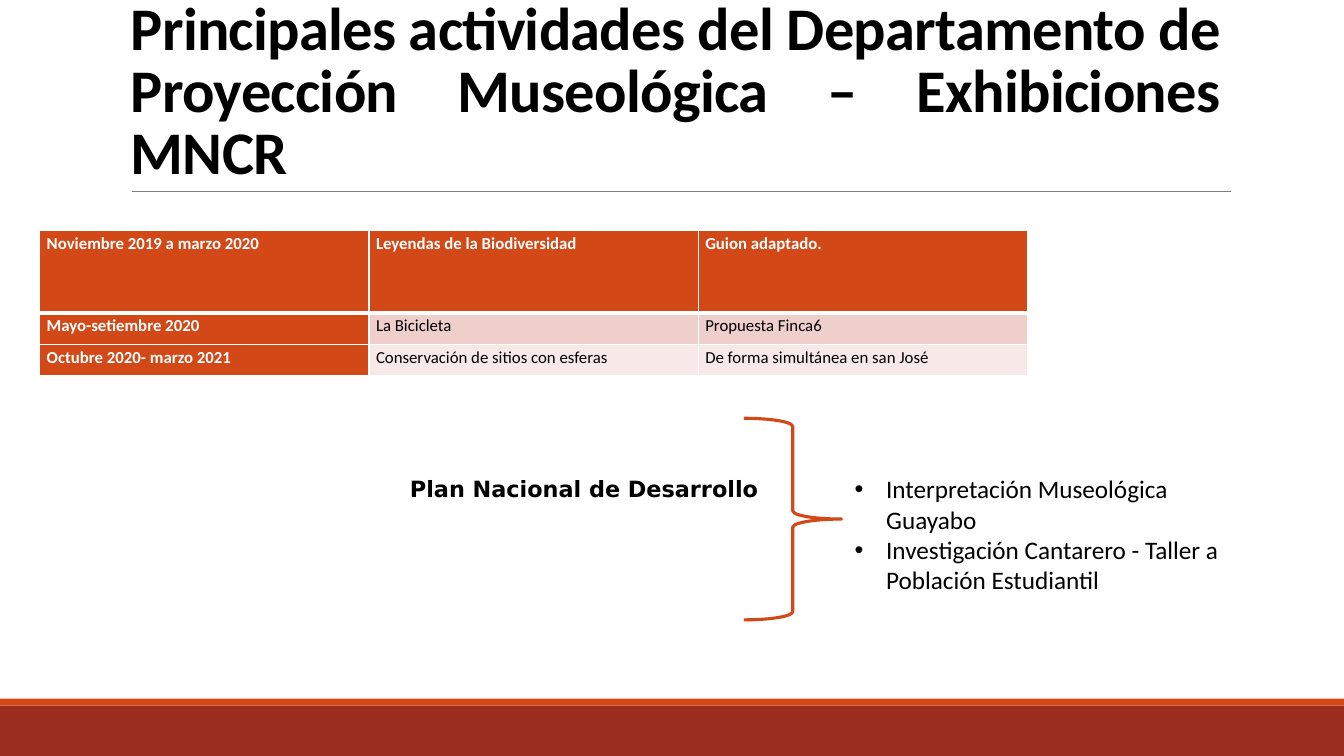
from dataclasses import dataclass
from typing import Any

from lxml.etree import SubElement
from pptx import Presentation
from pptx.dml.color import RGBColor
from pptx.enum.shapes import MSO_CONNECTOR as Connector, MSO_SHAPE as Preset
from pptx.enum.text import MSO_ANCHOR as Anchor, PP_ALIGN as Align
from pptx.oxml.ns import qn
from pptx.util import Pt

ORANGE, RUST, GRAY = "D34817", "9B2D1F", "808080"
WHITE, BLACK = "FFFFFF", "000000"
PINK, PALE_PINK = "EFCFCC", "F7E9E8"

ACTIVITIES = [
    ["Noviembre 2019 a marzo 2020", "Leyendas de la Biodiversidad", "Guion adaptado."],
    ["Mayo-setiembre 2020", "La Bicicleta", "Propuesta Finca6"],
    ["Octubre 2020- marzo 2021", "Conservación de sitios con esferas", "De forma simultánea en san José"],
]
ROW_HEIGHTS = [58.5, 22.6, 22.6]
ROW_FILLS = [ORANGE, PINK, PALE_PINK]
COLUMN_WIDTH = 235.2


@dataclass
class Style:
    size: float
    font: str = "Calibri"
    color: str = BLACK
    bold: bool = False
    spacing: float = 0


@dataclass
class TextBlock:
    left: float
    top: float
    width: float
    height: float
    lines: list[str]
    style: Style
    layout: dict[str, Any]
    anchor: Any = Anchor.TOP
    bullet_indent: float = 0


@dataclass
class Band:
    top: float
    height: float
    color: str


BANDS = [Band(504, 36, RUST), Band(499, 5, ORANGE)]
TEXT_BLOCKS = [
    TextBlock(
        86.4, 22.3, 792, 114.5,
        ["Principales actividades del Departamento de Proyección Museológica – Exhibiciones MNCR"],
        Style(43.2, bold=True, spacing=-0.5),
        {"alignment": Align.JUSTIFY, "line_spacing": 0.85}, Anchor.BOTTOM,
    ),
    TextBlock(
        285.8, 334.8, 271.4, 28, ["Plan Nacional de Desarrollo"],
        Style(16, "DejaVu Sans", bold=True),
        {"alignment": Align.JUSTIFY, "line_spacing": 1.07},
    ),
    TextBlock(
        603.4, 334.8, 305.3, 94.3,
        ["Interpretación Museológica Guayabo", "Investigación Cantarero - Taller a Población Estudiantil"],
        Style(18), {"alignment": Align.LEFT}, bullet_indent=22.5,
    ),
]


def rgb(color: str) -> RGBColor:
    return RGBColor.from_string(color)


def apply(target: Any, values: dict[str, Any]) -> None:
    for name, value in values.items():
        setattr(target, name, value)


def write(para: Any, text: str, style: Style, layout: dict[str, Any]) -> None:
    apply(para, layout)
    span = para.add_run()
    span.text = text
    apply(span.font, {"size": Pt(style.size), "name": style.font, "bold": style.bold})
    span.font.color.rgb = rgb(style.color)
    if style.spacing:
        span.font._element.set("spc", str(round(style.spacing * 100)))


def add_bullet(para: Any, indent: float) -> None:
    props = para._p.get_or_add_pPr()
    props.set("marL", str(Pt(indent)))
    props.set("indent", str(-Pt(indent)))
    SubElement(props, qn("a:buFont")).set("typeface", "Arial")
    SubElement(props, qn("a:buChar")).set("char", "•")


def draw_text(page: Any, block: TextBlock) -> None:
    box = page.shapes.add_textbox(Pt(block.left), Pt(block.top), Pt(block.width), Pt(block.height))
    frame = box.text_frame
    apply(frame, {"word_wrap": True, "vertical_anchor": block.anchor})
    for index, line in enumerate(block.lines):
        para = frame.add_paragraph() if index else frame.paragraphs[0]
        write(para, line, block.style, block.layout)
        if block.bullet_indent:
            add_bullet(para, block.bullet_indent)


def draw_band(page: Any, band: Band) -> None:
    shape = page.shapes.add_shape(Preset.RECTANGLE, 0, Pt(band.top), Pt(960), Pt(band.height))
    shape.shadow.inherit = False
    shape.fill.solid()
    shape.fill.fore_color.rgb = rgb(band.color)
    shape.line.fill.background()


def draw_rule(page: Any) -> None:
    rule = page.shapes.add_connector(Connector.STRAIGHT, Pt(94.3), Pt(136.8), Pt(879), Pt(136.8))
    rule.line.color.rgb = rgb(GRAY)
    rule.line.width = Pt(0.5)
    SubElement(rule._element.spPr, qn("a:effectLst"))


def draw_brace(page: Any) -> None:
    brace = page.shapes.add_shape(Preset.RIGHT_BRACE, Pt(531.4), Pt(298.8), Pt(69.8), Pt(144))
    brace.shadow.inherit = False
    brace.fill.background()
    brace.line.color.rgb = rgb(ORANGE)
    brace.line.width = Pt(2.25)


def set_borders(cell: Any, widths: dict[str, float]) -> None:
    props = cell._tc.get_or_add_tcPr()
    for side, width in widths.items():
        border = SubElement(props, qn(f"a:ln{side}"))
        border.set("w", str(Pt(width)))
        fill = SubElement(border, qn("a:solidFill"))
        SubElement(fill, qn("a:srgbClr")).set("val", WHITE)


def draw_table(page: Any) -> None:
    table = page.shapes.add_table(
        len(ROW_HEIGHTS), 3, Pt(28.4), Pt(164.9), Pt(3 * COLUMN_WIDTH), Pt(sum(ROW_HEIGHTS))
    ).table
    for column in table.columns:
        column.width = Pt(COLUMN_WIDTH)
    layout = {"alignment": Align.JUSTIFY, "line_spacing": 1.15, "space_after": Pt(10)}
    margins = {"margin_left": Pt(5), "margin_right": Pt(5), "margin_top": 0, "margin_bottom": 0}
    for row, texts in enumerate(ACTIVITIES):
        table.rows[row].height = Pt(ROW_HEIGHTS[row])
        for column, text in enumerate(texts):
            cell = table.cell(row, column)
            heading = row == 0 or column == 0
            apply(cell, margins)
            set_borders(cell, {"L": 1, "R": 1, "T": 3 if row == 1 else 1, "B": 1 if row else 3})
            cell.fill.solid()
            cell.fill.fore_color.rgb = rgb(ORANGE if heading else ROW_FILLS[row])
            style = Style(12, color=WHITE if heading else BLACK, bold=heading)
            write(cell.text_frame.paragraphs[0], text, style, layout)


def main() -> None:
    deck = Presentation()
    apply(deck, {"slide_width": Pt(960), "slide_height": Pt(540)})
    page = deck.slides.add_slide(deck.slide_layouts[6])
    for band in BANDS:
        draw_band(page, band)
    draw_rule(page)
    draw_table(page)
    draw_brace(page)
    for block in TEXT_BLOCKS:
        draw_text(page, block)
    deck.save("out.pptx")


if __name__ == "__main__":
    main()
